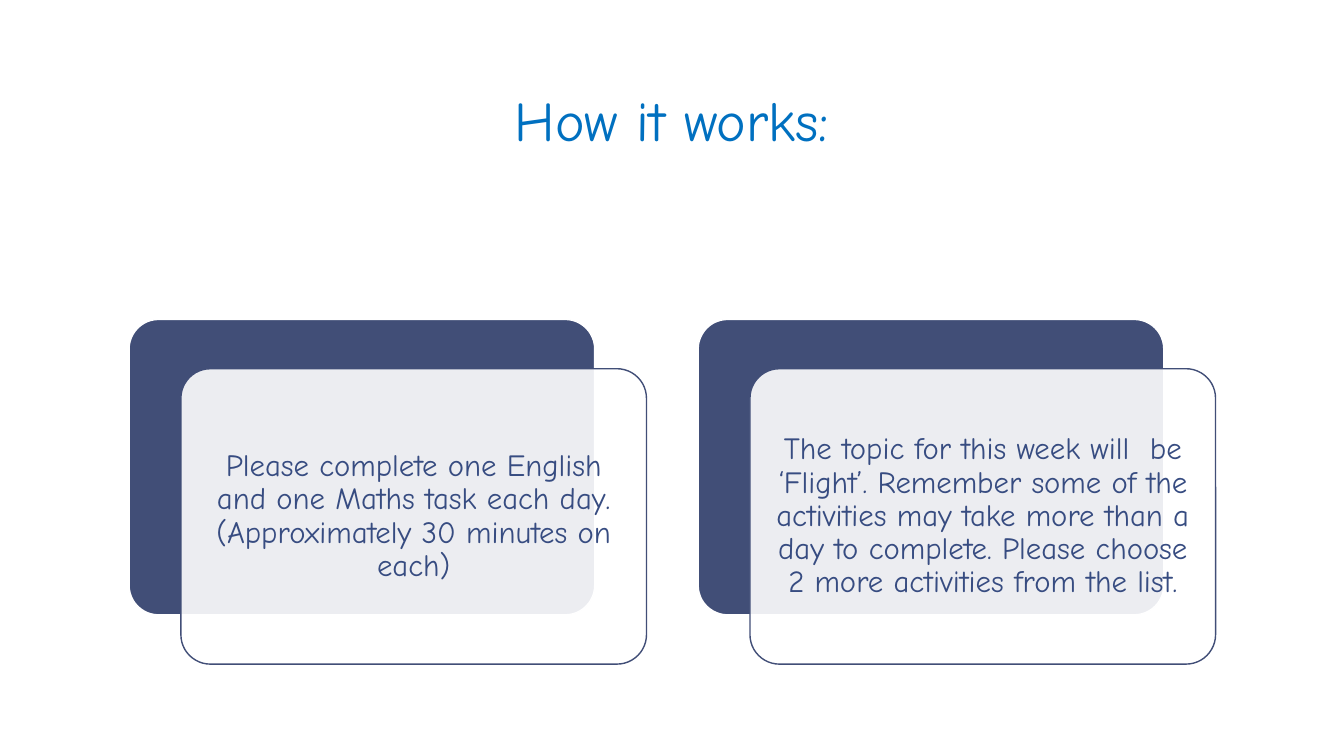
from pptx import Presentation
from pptx.util import Pt
from pptx.dml.color import RGBColor
from pptx.enum.shapes import MSO_SHAPE
from pptx.enum.text import MSO_ANCHOR, PP_ALIGN
from lxml import etree

# Content
TITLE = "How it works:"
CARDS = [
    "Please complete one English and one Maths task each day. "
    "(Approximately 30 minutes on each)",
    "The topic for this week will  be ‘Flight’. Remember some of the activities "
    "may take more than a day to complete. Please choose 2 more activities from the list.",
]

# Theme and layout, lengths in points
THEME = {"font": "Comic Neue", "title": "0070C0", "navy": "414E77", "text": "374C81",
         "white": "FFFFFF", "title_size": 40, "card_size": 22}
SLIDE_W, SLIDE_H = 960, 540
CARD_X, CARD_Y, CARD_W, CARD_H = 92.2, 228.2, 332.6, 211
CARD_STEP = 406.5
PANEL_DX, PANEL_DY = 37, 35.2
PANEL_INSET = 6.6


def color(name):
    return RGBColor.from_string(THEME[name])


def add_text(tf, text, size, ink, spacing):
    tf.word_wrap = True
    p = tf.paragraphs[0]
    p.alignment = PP_ALIGN.CENTER
    p.line_spacing = spacing
    r = p.add_run()
    r.text = text
    r.font.name = THEME["font"]
    r.font.size = Pt(THEME[size])
    r.font.color.rgb = color(ink)


def add_rounded(s, x, y, fill, line):
    sp = s.shapes.add_shape(MSO_SHAPE.ROUNDED_RECTANGLE,
                            Pt(x), Pt(y), Pt(CARD_W), Pt(CARD_H))
    sp.adjustments[0] = 0.1
    sp.shadow.inherit = False
    sp.fill.solid()
    sp.fill.fore_color.rgb = color(fill)
    sp.line.color.rgb = color(line)
    sp.line.width = Pt(1)
    return sp


def set_opacity(sp, percent):
    ns = "{http://schemas.openxmlformats.org/drawingml/2006/main}"
    clr = sp.fill._xPr.find(f"{ns}solidFill/{ns}srgbClr")
    etree.SubElement(clr, f"{ns}alpha").set("val", str(percent * 1000))


def main():
    prs = Presentation()
    prs.slide_width, prs.slide_height = Pt(SLIDE_W), Pt(SLIDE_H)
    s = prs.slides.add_slide(prs.slide_layouts[6])

    # Title
    title = s.shapes.add_textbox(Pt(92.9), Pt(64.8), Pt(774), Pt(104.4))
    add_text(title.text_frame, TITLE, "title_size", "title", 0.85)

    # Cards: navy backing with a translucent text panel shifted down and right
    for i, text in enumerate(CARDS):
        x = CARD_X + i * CARD_STEP
        add_rounded(s, x, CARD_Y, "navy", "white")
        panel = add_rounded(s, x + PANEL_DX, CARD_Y + PANEL_DY, "white", "navy")
        set_opacity(panel, 90)
        tf = panel.text_frame
        tf.margin_left = tf.margin_right = tf.margin_top = tf.margin_bottom = Pt(PANEL_INSET)
        tf.vertical_anchor = MSO_ANCHOR.MIDDLE
        add_text(tf, text, "card_size", "text", 0.9)

    prs.save("out.pptx")


if __name__ == "__main__":
    main()
